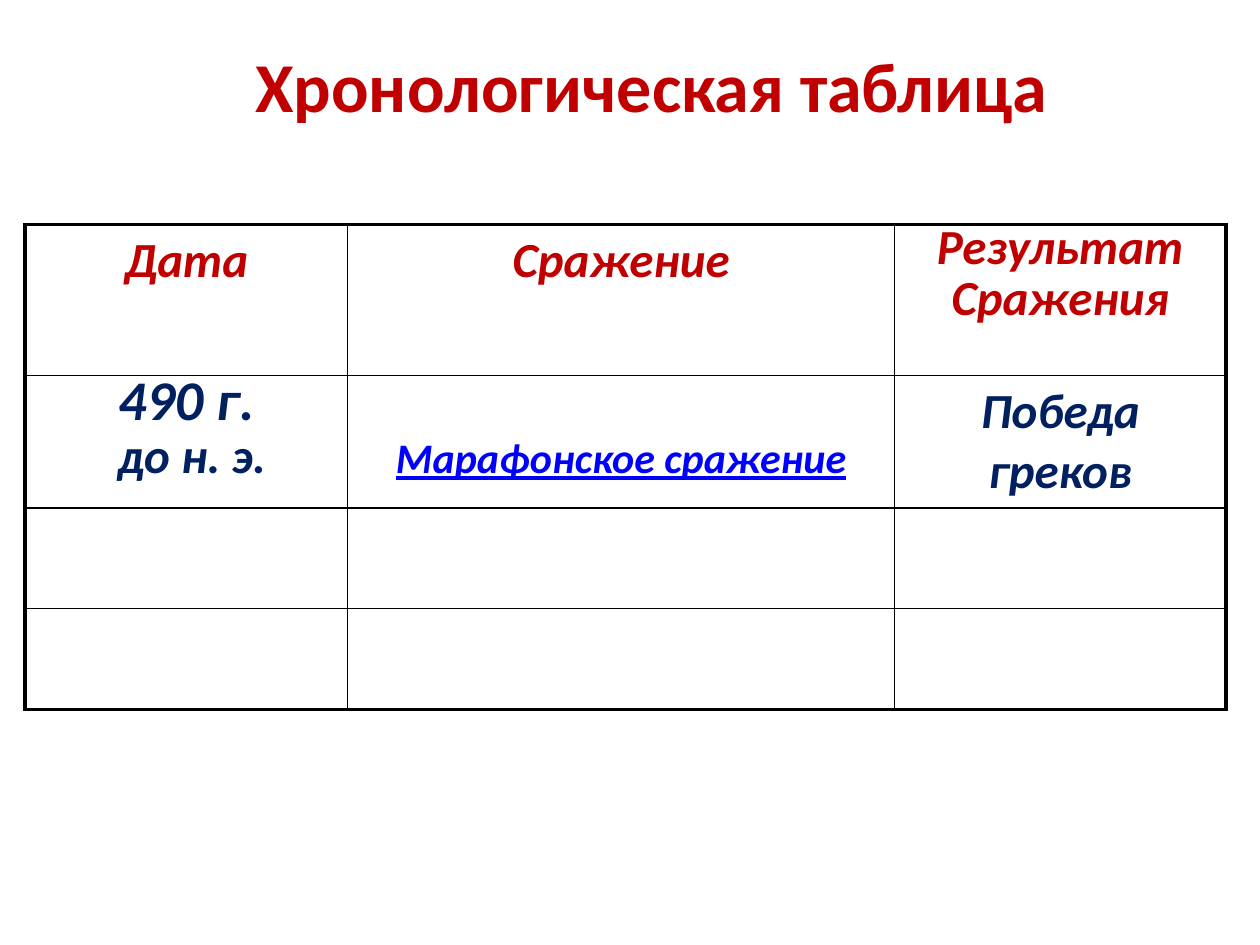
from lxml.etree import SubElement
from pptx import Presentation
from pptx.dml.color import RGBColor
from pptx.enum.text import MSO_AUTO_SIZE, PP_ALIGN
from pptx.oxml.ns import qn
from pptx.util import Inches, Pt

RED, NAVY, LINK, BLACK = "C00000", "002060", "0000FF", "000000"
THIN, THICK = 1, 2.25

TITLE = ("Хронологическая таблица", dict(size=40, bold=True), RED)
HEAD = dict(size=28, bold=True, italic=True)
BIG = dict(HEAD, size=32)
LINKED = dict(HEAD, size=24, underline=True)

# Each paragraph: text, font, colour, line spacing, space before in percent
ROWS = [
    [
        [("Дата", HEAD, RED, None, 20)],
        [("Сражение", HEAD, RED, None, 20)],
        [("Результат", HEAD, RED, 0.7, 20), ("Сражения", HEAD, RED, 0.7, 20)],
    ],
    [
        [("490 г.", BIG, NAVY, 0.7, 50), (" до н. э.", HEAD, NAVY, 0.4, 50)],
        [("Марафонское сражение", LINKED, LINK, None, 0)],
        [("Победа греков", HEAD, NAVY, None, 20)],
    ],
    [[], [], []],
    [[], [], []],
]
COL_WIDTHS = [2.56, 4.34, 2.63]
ROW_HEIGHTS = [1.2, 1.04, 0.8, 0.8]
TOP_MARGINS = {(1, 1): 0.46}


def rgb(color):
    return RGBColor.from_string(color)


def write(p, text, font, color, line_spacing=None, before=0):
    p.alignment = PP_ALIGN.CENTER
    if line_spacing:
        p.line_spacing = line_spacing
    if before:
        space = SubElement(p._p.get_or_add_pPr(), qn("a:spcBef"))
        SubElement(space, qn("a:spcPct"), val=str(before * 1000))
    r = p.add_run()
    r.text = text
    r.font.name = "Calibri"
    r.font.color.rgb = rgb(color)
    for name, value in font.items():
        setattr(r.font, name, Pt(value) if name == "size" else value)


def set_borders(cell, widths):
    tc_pr = cell._tc.get_or_add_tcPr()
    for i, (side, width) in enumerate(widths.items()):
        ln = tc_pr.makeelement(qn(f"a:ln{side}"), {"w": str(int(Pt(width)))})
        fill = SubElement(ln, qn("a:solidFill"))
        SubElement(fill, qn("a:srgbClr"), val=BLACK)
        tc_pr.insert(i, ln)


prs = Presentation()
prs.slide_width, prs.slide_height = Inches(10), Inches(7.5)
s = prs.slides.add_slide(prs.slide_layouts[6])

# Table
last_row, last_col = len(ROW_HEIGHTS) - 1, len(COL_WIDTHS) - 1
table = s.shapes.add_table(
    len(ROW_HEIGHTS), len(COL_WIDTHS), Inches(0.2), Inches(1.78),
    Inches(sum(COL_WIDTHS)), Inches(sum(ROW_HEIGHTS))).table
table.first_row = table.horz_banding = False
for col, width in zip(table.columns, COL_WIDTHS):
    col.width = Inches(width)
for row, height in zip(table.rows, ROW_HEIGHTS):
    row.height = Inches(height)

# Cells: thick outer frame, thin inner grid
for i, row in enumerate(ROWS):
    for j, paragraphs in enumerate(row):
        cell = table.cell(i, j)
        cell.fill.background()
        cell.margin_top = Inches(TOP_MARGINS.get((i, j), 0.05))
        set_borders(cell, {
            "L": THICK if j == 0 else THIN,
            "R": THICK if j == last_col else THIN,
            "T": THICK if i == 0 else THIN,
            "B": THICK if i == last_row else THIN,
        })
        tf = cell.text_frame
        for n, paragraph in enumerate(paragraphs):
            write(tf.add_paragraph() if n else tf.paragraphs[0], *paragraph)

# Title
tf = s.shapes.add_textbox(
    Inches(1.46), Inches(0.29), Inches(7.42), Inches(0.77)).text_frame
tf.word_wrap = True
tf.auto_size = MSO_AUTO_SIZE.SHAPE_TO_FIT_TEXT
write(tf.paragraphs[0], *TITLE)

prs.save("out.pptx")
